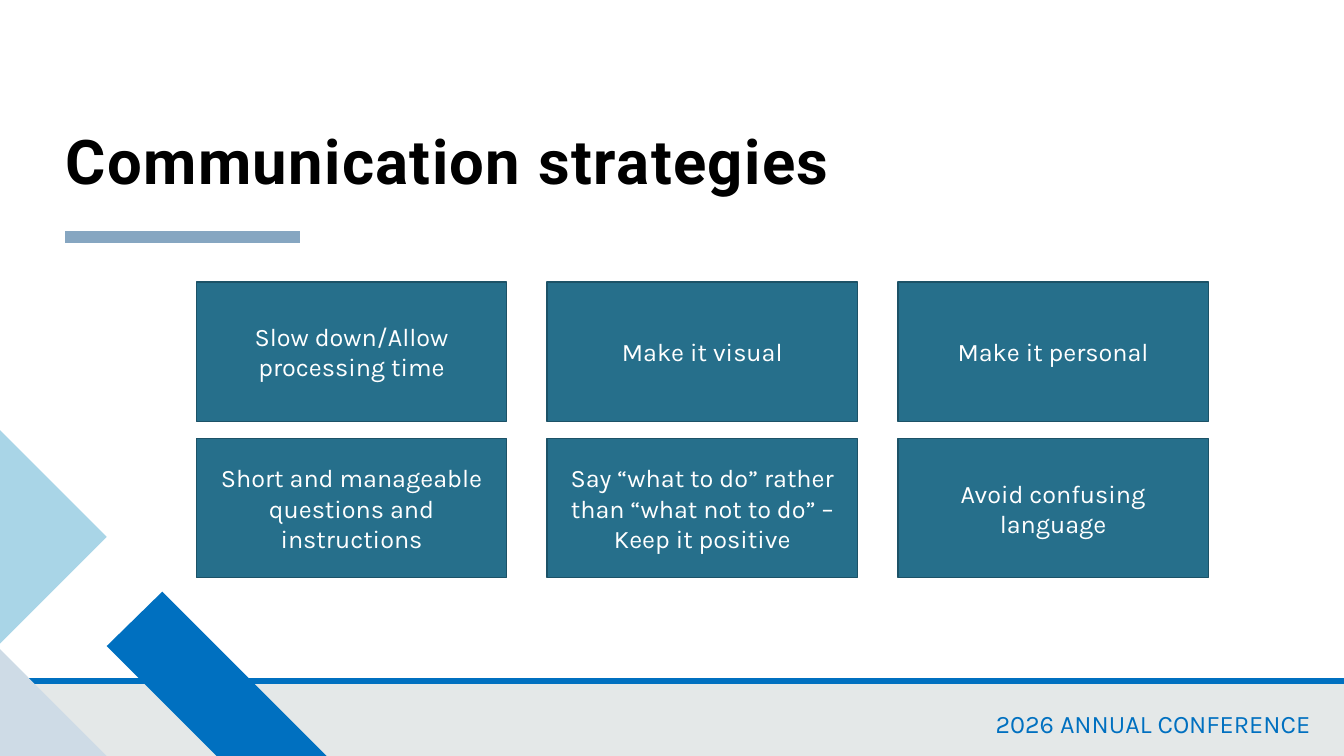
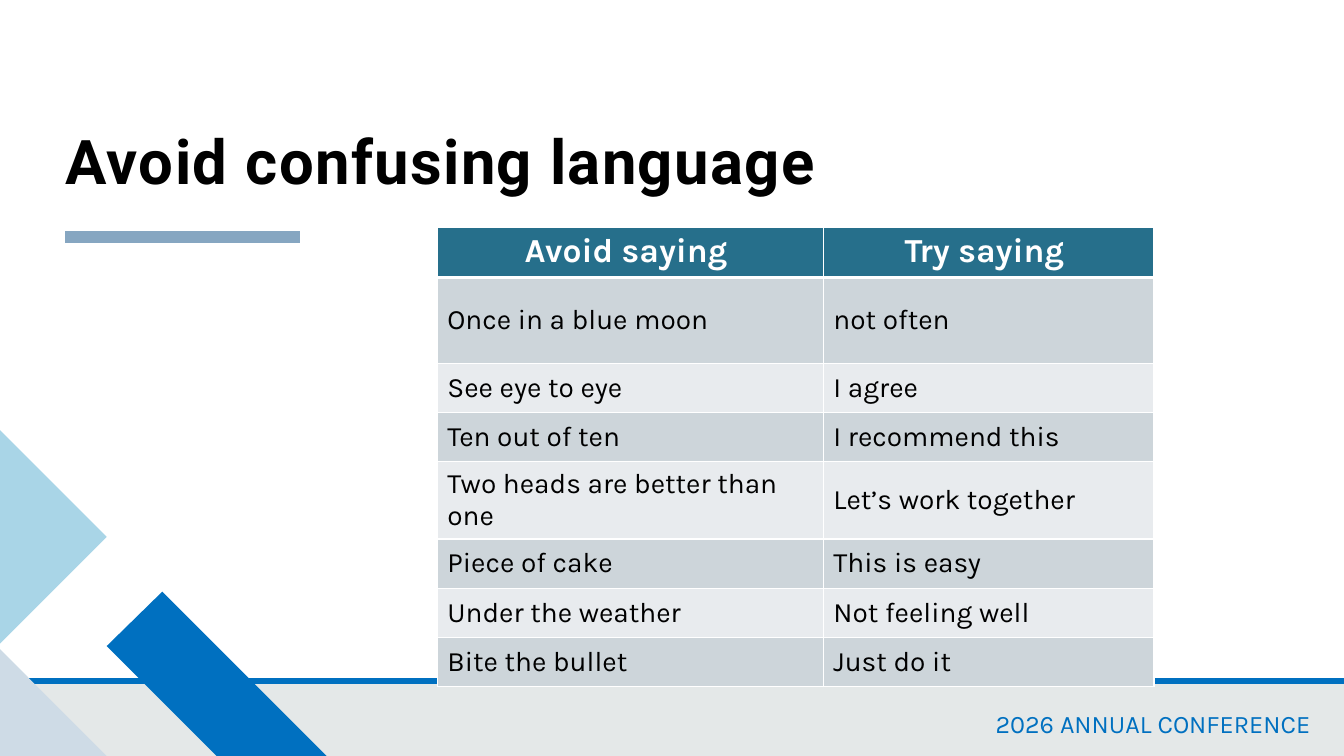
from dataclasses import dataclass

import pptx
import pptx.dml.color
import pptx.enum.shapes
import pptx.enum.text
import pptx.oxml
import pptx.oxml.ns
import pptx.util

Cm = pptx.util.Cm
Pt = pptx.util.Pt
ALIGN = pptx.enum.text.PP_ALIGN
ANCHOR = pptx.enum.text.MSO_ANCHOR

# Content
FOOTER = "2026 ANNUAL CONFERENCE"
STRATEGIES_TITLE = "Communication strategies"
STRATEGIES = [
    ["Slow down/Allow processing time", "Make it visual", "Make it personal"],
    [
        "Short and manageable questions and instructions",
        "Say “what to do” rather than “what not to do” – Keep it positive",
        "Avoid confusing language",
    ],
]
PHRASES_TITLE = "Avoid confusing language"
PHRASES = [
    ("Avoid saying ", "Try saying "),
    ("Once in a blue moon", "not often"),
    ("See eye to eye", "I agree"),
    ("Ten out of ten", "I recommend this"),
    ("Two heads are better than one", "Let’s work together"),
    ("Piece of cake", "This is easy"),
    ("Under the weather", "Not feeling well"),
    ("Bite the bullet", "Just do it"),
]


@dataclass(frozen=True)
class Theme:
    heading_font: str = "Roboto"
    body_font: str = "Karla"
    black: str = "000000"
    white: str = "FFFFFF"
    blue: str = "0070C0"
    teal: str = "266F8B"
    teal_edge: str = "1C5267"
    rule: str = "86A6C1"
    band: str = "E4E8E8"
    pale_blue: str = "CEDBE6"
    sky: str = "A9D5E7"
    row_dark: str = "CDD5DA"
    row_light: str = "E8EBEE"
    title_size: int = 44
    header_size: int = 24
    cell_size: int = 20
    body_size: int = 18


THEME = Theme()

# Geometry in centimetres
SLIDE_WIDTH, SLIDE_HEIGHT = 33.87, 19.05
BAND_TOP = 17.16
MARGIN = 1.65
RULE_TOP, RULE_LENGTH = 5.97, 5.92
CORNER_SHAPES = [
    (THEME.blue, [(8.23, 19.05), (5.46, 19.05), (2.69, 16.28), (4.09, 14.91)]),
    (THEME.pale_blue, [(2.69, 19.05), (0, 19.05), (0, 16.36)]),
    (THEME.sky, [(0, 10.84), (2.69, 13.53), (0, 16.22)]),
]
GRID_LEFT, GRID_TOP = 4.95, 7.11
BOX_WIDTH, BOX_HEIGHT = 7.82, 3.51
GAP_X, GAP_Y = 1.02, 0.43
TABLE_LEFT, TABLE_TOP = 11.02, 5.72
COLUMN_WIDTHS = [9.73, 8.33]
ROW_HEIGHT, TALL_ROW_HEIGHT = 1.24, 2.16


def rgb(value):
    return pptx.dml.color.RGBColor.from_string(value)


def write_text(frame, text, *, size=THEME.body_size, color=THEME.black,
               font=THEME.body_font, bold=False, align=ALIGN.LEFT,
               anchor=ANCHOR.TOP, line_spacing=None, tracking=None):
    frame.word_wrap = True
    frame.vertical_anchor = anchor
    paragraph = frame.paragraphs[0]
    paragraph.alignment = align
    if line_spacing:
        paragraph.line_spacing = line_spacing
    run = paragraph.add_run()
    run.text = text
    run.font.name = font
    run.font.size = Pt(size)
    run.font.bold = bold
    run.font.color.rgb = rgb(color)
    if tracking:
        run.font._element.set("spc", str(tracking * 100))


def paint(shape, fill, line=None):
    shape.shadow.inherit = False
    shape.fill.solid()
    shape.fill.fore_color.rgb = rgb(fill)
    if line:
        shape.line.color.rgb = rgb(line)
        shape.line.width = Pt(1)
    else:
        shape.line.fill.background()


def add_box(slide, left, top, width, height, fill, line):
    shape = slide.shapes.add_shape(
        pptx.enum.shapes.MSO_SHAPE.RECTANGLE,
        Cm(left), Cm(top), Cm(width), Cm(height))
    paint(shape, fill, line)
    return shape


def add_horizontal_line(slide, left, right, y, color, weight):
    line = slide.shapes.add_connector(
        pptx.enum.shapes.MSO_CONNECTOR.STRAIGHT,
        Cm(left), Cm(y), Cm(right), Cm(y))
    line.line.color.rgb = rgb(color)
    line.line.width = Pt(weight)
    properties = line._element.spPr
    properties.append(properties.makeelement(pptx.oxml.ns.qn("a:effectLst"), {}))


def add_polygon(slide, points, fill):
    corners = [(Cm(x), Cm(y)) for x, y in points]
    builder = slide.shapes.build_freeform(*corners[0])
    builder.add_line_segments(corners[1:], close=True)
    paint(builder.convert_to_shape(), fill)


def add_conference_slide(presentation, title_text):
    slide = presentation.slides.add_slide(presentation.slide_layouts[5])

    # Footer band
    add_box(slide, 0, BAND_TOP, SLIDE_WIDTH, SLIDE_HEIGHT - BAND_TOP,
            THEME.band, THEME.band)
    footer = slide.shapes.add_textbox(Cm(24.84), Cm(17.73), Cm(8.9), Cm(1.02))
    write_text(footer.text_frame, FOOTER, color=THEME.blue)
    add_horizontal_line(slide, 0, SLIDE_WIDTH, BAND_TOP, THEME.blue, 4.5)

    # Title rule and corner decoration
    add_horizontal_line(slide, MARGIN, MARGIN + RULE_LENGTH, RULE_TOP, THEME.rule, 8)
    for fill, points in CORNER_SHAPES:
        add_polygon(slide, points, fill)

    # Title
    title = slide.shapes.title
    title.left, title.top, title.width, title.height = (
        Cm(MARGIN), Cm(0.28), Cm(30.2), Cm(4.67))
    frame = title.text_frame
    frame.auto_size = pptx.enum.text.MSO_AUTO_SIZE.NONE
    frame.margin_left = frame.margin_right = 0
    frame.margin_top = frame.margin_bottom = 0
    write_text(frame, title_text, size=THEME.title_size, font=THEME.heading_font,
               bold=True, anchor=ANCHOR.BOTTOM, line_spacing=0.8, tracking=1)
    return slide


def add_strategy_grid(slide):
    for row, labels in enumerate(STRATEGIES):
        for column, label in enumerate(labels):
            box = add_box(slide,
                          GRID_LEFT + column * (BOX_WIDTH + GAP_X),
                          GRID_TOP + row * (BOX_HEIGHT + GAP_Y),
                          BOX_WIDTH, BOX_HEIGHT, THEME.teal, THEME.teal_edge)
            write_text(box.text_frame, label, color=THEME.white,
                       align=ALIGN.CENTER, anchor=ANCHOR.MIDDLE)


def set_borders(cell, bottom_weight):
    properties = cell._tc.get_or_add_tcPr()
    for side, weight in (("L", 1), ("R", 1), ("T", 1), ("B", bottom_weight)):
        properties.append(pptx.oxml.parse_xml(
            f'<a:ln{side} {pptx.oxml.ns.nsdecls("a")} w="{Pt(weight)}">'
            f'<a:solidFill><a:srgbClr val="{THEME.white}"/></a:solidFill>'
            f'</a:ln{side}>'))


def add_phrase_table(slide):
    heights = [ROW_HEIGHT] * len(PHRASES)
    heights[1] = TALL_ROW_HEIGHT
    table = slide.shapes.add_table(
        len(PHRASES), len(COLUMN_WIDTHS), Cm(TABLE_LEFT), Cm(TABLE_TOP),
        Cm(sum(COLUMN_WIDTHS)), Cm(sum(heights))).table
    for column, width in zip(table.columns, COLUMN_WIDTHS):
        column.width = Cm(width)
    for index, (height, phrases) in enumerate(zip(heights, PHRASES)):
        table.rows[index].height = Cm(height)
        if index == 0:
            fill, bottom_weight = THEME.teal, 3
            style = dict(size=THEME.header_size, color=THEME.white,
                         bold=True, align=ALIGN.CENTER)
        else:
            fill = THEME.row_dark if index % 2 else THEME.row_light
            bottom_weight = 1
            style = dict(size=THEME.cell_size, anchor=ANCHOR.MIDDLE)
        for column, phrase in enumerate(phrases):
            cell = table.cell(index, column)
            set_borders(cell, bottom_weight)
            cell.fill.solid()
            cell.fill.fore_color.rgb = rgb(fill)
            cell.vertical_anchor = style.get("anchor", ANCHOR.TOP)
            write_text(cell.text_frame, phrase, **style)


def main():
    presentation = pptx.Presentation()
    presentation.slide_width = Cm(SLIDE_WIDTH)
    presentation.slide_height = Cm(SLIDE_HEIGHT)
    add_strategy_grid(add_conference_slide(presentation, STRATEGIES_TITLE))
    add_phrase_table(add_conference_slide(presentation, PHRASES_TITLE))
    presentation.save("out.pptx")


if __name__ == "__main__":
    main()
